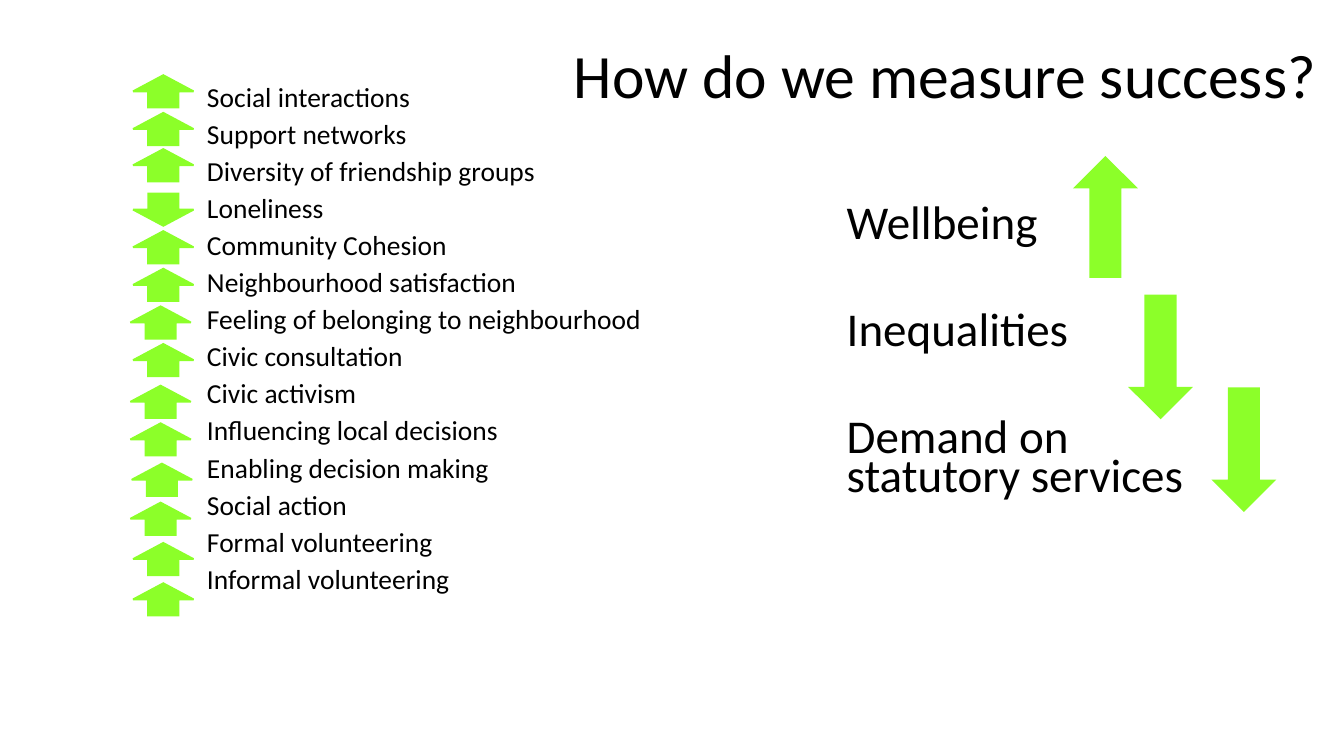
from dataclasses import dataclass

from lxml.etree import SubElement
from pptx import Presentation
from pptx.dml.color import RGBColor
from pptx.enum.shapes import MSO_SHAPE
from pptx.enum.text import MSO_ANCHOR, MSO_AUTO_SIZE, PP_ALIGN
from pptx.oxml.ns import qn
from pptx.util import Inches, Pt

FONT = "Calibri"
BLACK = "000000"
GREEN = "8CFF29"
SLIDE_WIDTH = 10
ARROW_WIDTH = 0.45
SMALL_ARROW_HEIGHT = 0.24


@dataclass
class Arrow:
    left: float
    top: float
    height: float = SMALL_ARROW_HEIGHT
    down: bool = False


@dataclass
class Measure:
    label: str
    arrow: Arrow


MEASURES = [
    Measure("Social interactions", Arrow(0.99, 0.56)),
    Measure("Support networks", Arrow(0.99, 0.84)),
    Measure("Diversity of friendship groups", Arrow(0.99, 1.11)),
    Measure("Loneliness", Arrow(0.99, 1.44, down=True)),
    Measure("Community Cohesion", Arrow(0.99, 1.72)),
    Measure("Neighbourhood satisfaction", Arrow(0.99, 2)),
    Measure("Feeling of belonging to neighbourhood", Arrow(0.97, 2.28)),
    Measure("Civic consultation", Arrow(0.99, 2.56)),
    Measure("Civic activism", Arrow(0.97, 2.87)),
    Measure("Influencing local decisions", Arrow(0.97, 3.15)),
    Measure("Enabling decision making", Arrow(0.98, 3.45)),
    Measure("Social action", Arrow(0.97, 3.74)),
    Measure("Formal volunteering", Arrow(0.99, 4.04)),
    Measure("Informal volunteering", Arrow(0.99, 4.34)),
]
OUTCOMES = [
    Measure("Wellbeing", Arrow(8, 1.17, 0.89)),
    Measure("Inequalities", Arrow(8.41, 2.2, 0.91, down=True)),
    Measure("Demand on statutory services", Arrow(9.03, 2.89, 0.91, down=True)),
]


def color(value: str) -> RGBColor:
    return RGBColor.from_string(value)


def fill_placeholder(shape, box: tuple, labels: list[str], size: float,
                     line_spacing: float, gap: float = 0, indent: float = 0,
                     anchor=MSO_ANCHOR.TOP) -> None:
    """Place a placeholder and write one plain paragraph per label."""
    shape.left, shape.top, shape.width, shape.height = map(Inches, box)
    frame = shape.text_frame
    frame.word_wrap = True
    frame.auto_size = MSO_AUTO_SIZE.NONE
    frame.vertical_anchor = anchor
    frame.margin_right = 0
    for index, label in enumerate(labels):
        paragraph = frame.add_paragraph() if index else frame.paragraphs[0]
        properties = paragraph._p.get_or_add_pPr()
        properties.set("marL", str(Inches(indent)))
        properties.set("indent", "0")
        SubElement(properties, qn("a:buNone"))
        paragraph.alignment = PP_ALIGN.LEFT
        paragraph.line_spacing = line_spacing
        paragraph.space_before = Pt(gap if index else 0)
        run = paragraph.add_run()
        run.text = label
        run.font.name = FONT
        run.font.size = Pt(size)
        run.font.color.rgb = color(BLACK)


def add_arrow(slide, arrow: Arrow) -> None:
    shape = slide.shapes.add_shape(
        MSO_SHAPE.UP_ARROW, Inches(arrow.left), Inches(arrow.top),
        Inches(ARROW_WIDTH), Inches(arrow.height))
    shape.rotation = 180 if arrow.down else 0
    shape.shadow.inherit = False
    shape.fill.solid()
    shape.fill.fore_color.rgb = color(GREEN)
    shape.line.color.rgb = color(GREEN)
    shape.line.width = Pt(1)
    # Sharp corners
    SubElement(shape.line._get_or_add_ln(), qn("a:miter"), lim="800000")


def main() -> None:
    presentation = Presentation()
    presentation.slide_width = Inches(SLIDE_WIDTH)
    presentation.slide_height = Inches(SLIDE_WIDTH * 9 / 16)
    slide = presentation.slides.add_slide(presentation.slide_layouts[3])
    title, measure_list, outcome_list = slide.placeholders

    # Title and the two lists
    fill_placeholder(title, (4.17, 0.04, 5.72, 1.09),
                     ["How do we measure success?"], 33, 0.9,
                     anchor=MSO_ANCHOR.MIDDLE)
    fill_placeholder(measure_list, (0.69, 0.61, 4.25, 4.51),
                     [measure.label for measure in MEASURES], 14.7, 0.7,
                     gap=7.5, indent=0.75)
    fill_placeholder(outcome_list, (6.2, 1.5, 3.11, 3.57),
                     [outcome.label for outcome in OUTCOMES], 25.2, 0.7,
                     gap=36)

    # Direction of change for each measure and outcome
    for measure in MEASURES + OUTCOMES:
        add_arrow(slide, measure.arrow)

    presentation.save("out.pptx")


if __name__ == "__main__":
    main()
